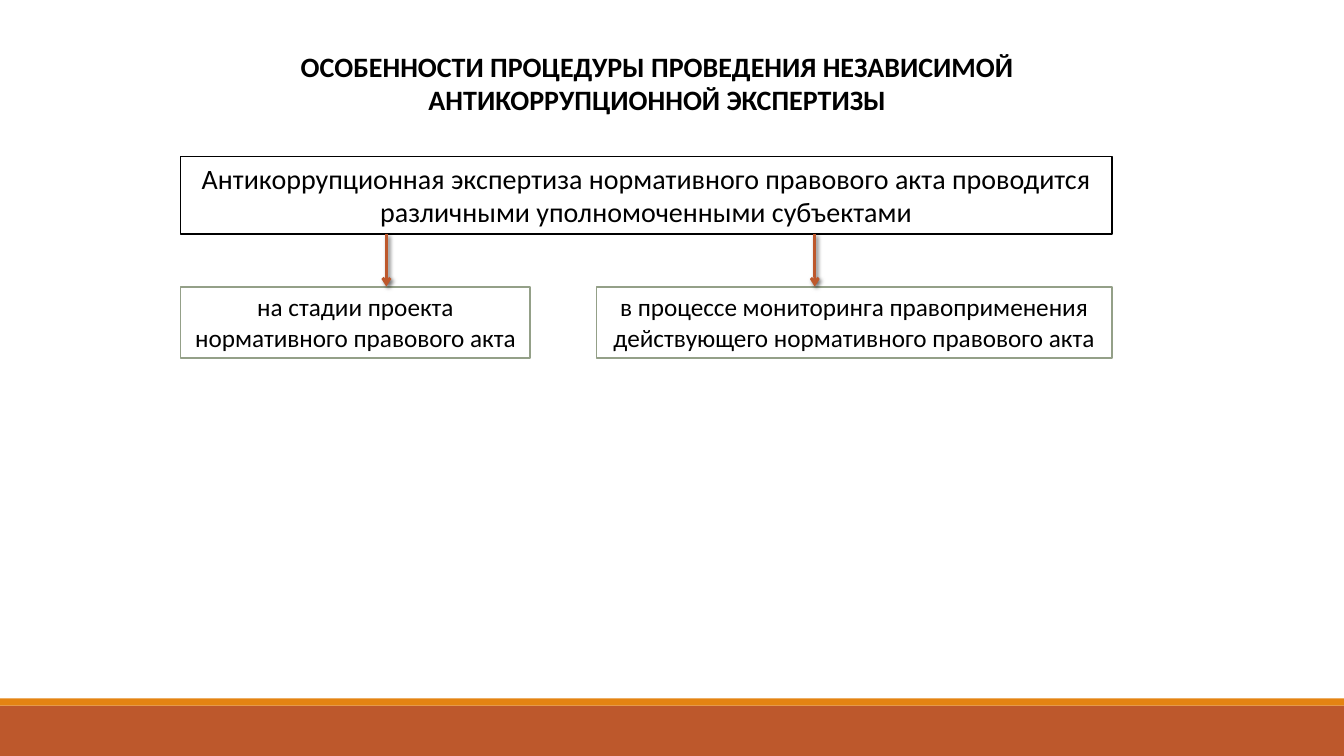
from lxml import etree
from pptx import Presentation
from pptx.dml.color import RGBColor
from pptx.enum.shapes import MSO_CONNECTOR, MSO_SHAPE
from pptx.enum.text import MSO_ANCHOR, PP_ALIGN
from pptx.oxml.ns import qn
from pptx.util import Pt

PX = 9525  # 96 px to the inch
W, H = 1280, 720
FONT = "Calibri"
BLACK = RGBColor(0x00, 0x00, 0x00)
WHITE = RGBColor(0xFF, 0xFF, 0xFF)
RUST = RGBColor(0xBD, 0x58, 0x2C)
ORANGE = RGBColor(0xE4, 0x83, 0x12)
SAGE = RGBColor(0x94, 0xA0, 0x88)
RECT = MSO_SHAPE.RECTANGLE
STRAIGHT = MSO_CONNECTOR.STRAIGHT
CENTER = PP_ALIGN.CENTER
TOP = MSO_ANCHOR.TOP


def px(*lengths):
    return [n * PX for n in lengths]


def write(sp, text, size=20, bold=False, color=BLACK):
    tf = sp.text_frame
    tf.word_wrap = True
    tf.vertical_anchor = TOP
    p = tf.paragraphs[0]
    p.alignment = CENTER
    r = p.add_run()
    r.text = text
    r.font.name = FONT
    r.font.size = Pt(size)
    r.font.bold = bold
    r.font.color.rgb = color


def add_rect(s, x, y, w, h, fill, line=None):
    sp = s.shapes.add_shape(RECT, *px(x, y, w, h))
    sp.shadow.inherit = False
    sp.fill.solid()
    sp.fill.fore_color.rgb = fill
    if line is None:
        sp.line.fill.background()
    else:
        sp.line.color.rgb = line
        sp.line.width = Pt(1.25)
    return sp


def add_arrow(s, x, y, length):
    cn = s.shapes.add_connector(STRAIGHT, *px(x, y, x, y + length))
    cn.line.color.rgb = RUST
    cn.line.width = Pt(2)
    sp_pr = cn._element.spPr
    etree.SubElement(sp_pr.find(qn("a:ln")), qn("a:tailEnd"), type="arrow")
    # Soft shadow towards the lower right
    effects = etree.SubElement(sp_pr, qn("a:effectLst"))
    shadow = etree.SubElement(effects, qn("a:outerShdw"), blurRad=str(Pt(3)),
                              dist=str(Pt(2)), dir="2700000", rotWithShape="0")
    color = etree.SubElement(shadow, qn("a:srgbClr"), val=str(BLACK))
    etree.SubElement(color, qn("a:alpha"), val="60000")


def add_footer(s, x, y, w, h, stripe=7):
    add_rect(s, x, y + stripe, w, h - stripe, RUST)
    add_rect(s, x, y, w, stripe, ORANGE)


def add_title(s, x, y, w, h):
    sp = s.shapes.add_textbox(*px(x, y, w, h))
    write(sp, "ОСОБЕННОСТИ ПРОЦЕДУРЫ ПРОВЕДЕНИЯ НЕЗАВИСИМОЙ "
              "АНТИКОРРУПЦИОННОЙ ЭКСПЕРТИЗЫ", bold=True)


def add_scheme(s, x, y, w, h):
    head_h, stage_h = 74, 68
    stage_y = y + h - stage_h

    # Common statement
    head = add_rect(s, x, y, w, head_h, WHITE, BLACK)
    write(head, "Антикоррупционная экспертиза нормативного правового акта "
                "проводится различными уполномоченными субъектами")

    # Stages: offset, width, arrow offset, text
    stages = [
        (0, 333, 196, "на стадии проекта нормативного правового акта"),
        (396, w - 396, 604, "в процессе мониторинга правоприменения "
                            "действующего нормативного правового акта"),
    ]
    for dx, stage_w, _, text in stages:
        stage = add_rect(s, x + dx, stage_y, stage_w, stage_h, WHITE, SAGE)
        write(stage, text, size=18)
    for _, _, arrow_dx, _ in stages:
        add_arrow(s, x + arrow_dx, y + head_h, h - head_h - stage_h)


def main():
    prs = Presentation()
    prs.slide_width, prs.slide_height = px(W, H)
    s = prs.slides.add_slide(prs.slide_layouts[6])
    add_footer(s, 0, 665, W, H - 665)
    add_title(s, 244, 42, 764, 74)
    add_scheme(s, 172, 149, 887, 192)
    prs.save("out.pptx")


if __name__ == "__main__":
    main()
